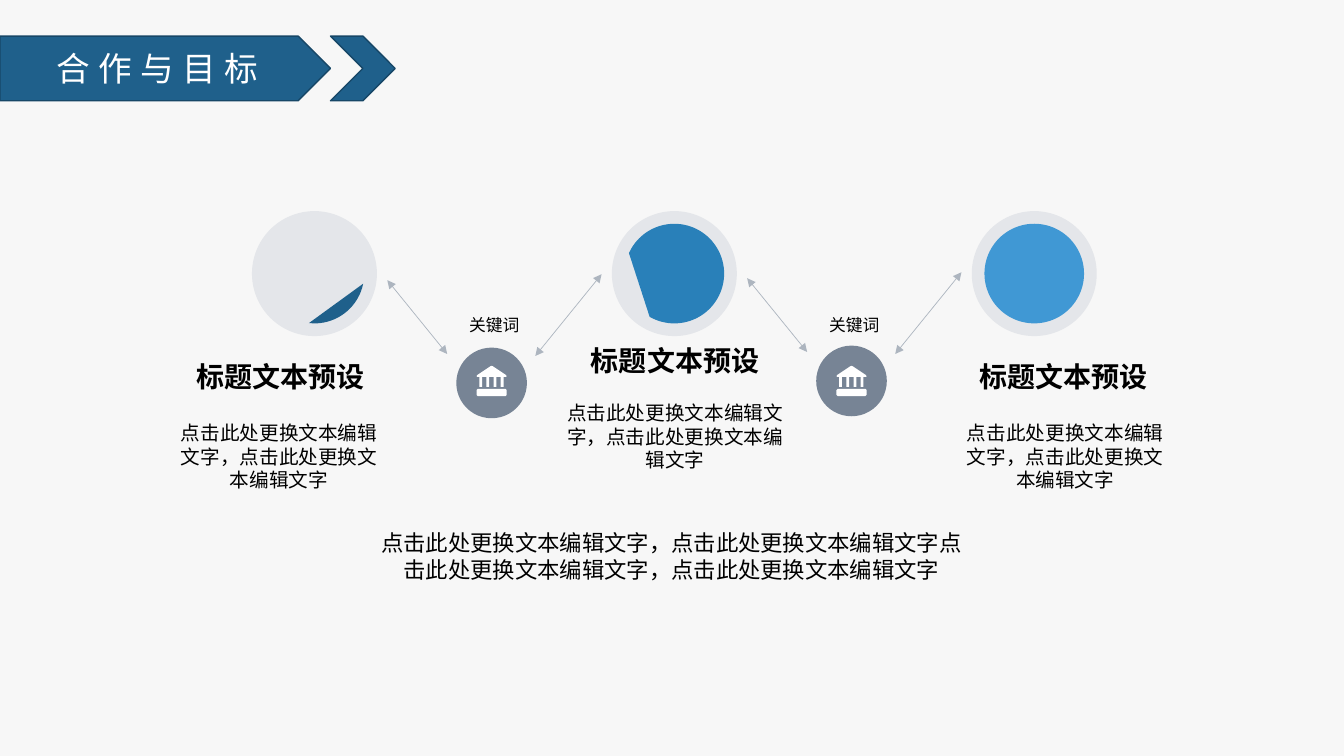
import pptx
import pptx.util
import pptx.dml.color
import pptx.enum.shapes
import pptx.enum.text
import lxml.etree

Cm = pptx.util.Cm
Pt = pptx.util.Pt
RGB = pptx.dml.color.RGBColor
Shape = pptx.enum.shapes.MSO_SHAPE
Anchor = pptx.enum.text.MSO_ANCHOR
qn = pptx.oxml.ns.qn

PAPER = RGB(0xF7, 0xF7, 0xF7)
NAVY = RGB(0x1F, 0x60, 0x8B)
EDGE = RGB(0x17, 0x47, 0x67)
BLUE = RGB(0x29, 0x80, 0xB9)
SKY = RGB(0x40, 0x98, 0xD4)
PALE = RGB(0xE4, 0xE6, 0xEA)
SLATE = RGB(0x77, 0x84, 0x95)
GREY = RGB(0xAD, 0xB5, 0xBF)
BLACK = RGB(0, 0, 0)
WHITE = RGB(255, 255, 255)
FONT = "Noto Sans CJK SC"
STEP = 9.07

deck = pptx.Presentation()
deck.slide_width = Cm(33.87)
deck.slide_height = Cm(19.05)
slide = deck.slides.add_slide(deck.slide_layouts[6])
slide.background.fill.solid()
slide.background.fill.fore_color.rgb = PAPER


def draw(kind, left, top, width, height, fill, edge=None):
    shape = slide.shapes.add_shape(kind, Cm(left), Cm(top), Cm(width), Cm(height))
    shape.shadow.inherit = False
    shape.fill.solid()
    shape.fill.fore_color.rgb = fill
    if edge is None:
        shape.line.fill.background()
    else:
        shape.line.color.rgb = edge
        shape.line.width = Pt(1)
    return shape


def write(shape, text, size, color=BLACK, bold=False):
    para = shape.text_frame.paragraphs[0]
    run = para.add_run()
    run.text = text
    para.alignment = pptx.enum.text.PP_ALIGN.CENTER
    para.font.size = Pt(size)
    para.font.bold = bold
    para.font.color.rgb = color
    para.font.name = FONT
    props = para._p.pPr.find(qn("a:defRPr"))
    east = lxml.etree.SubElement(props, qn("a:ea"))
    east.set("typeface", FONT)
    return run


banner = draw(Shape.PENTAGON, 0, 0.91, 8.33, 1.63, NAVY, EDGE)
banner.text_frame.vertical_anchor = Anchor.MIDDLE
run = write(banner, "合作与目标", 24, WHITE)
run._r.get_or_add_rPr().set("spc", "600")
draw(Shape.CHEVRON, 8.33, 0.91, 1.63, 1.63, NAVY, EDGE)

levels = [(11.68, 96.32, NAVY), (204.32, 119.68, BLUE), (162, 162, SKY)]
for i, (start, end, color) in enumerate(levels):
    left = 6.35 + i * STEP
    draw(Shape.OVAL, left, 5.32, 3.15, 3.15, PALE)
    chord = draw(Shape.CHORD, left + 0.32, 5.64, 2.51, 2.51, color)
    chord.adjustments[0] = start * 0.6
    chord.adjustments[1] = end * 0.6

base = [(3, 58), (73, 58), (76, 61), (76, 73), (73, 76), (3, 76), (0, 73), (0, 61)]
roof = [(35, 1), (38, 0), (41, 1), (74, 23), (76, 26), (74, 28)]
for x in (61, 43, 25, 7):
    roof += [(x + 7, 28), (x + 7, 53), (x, 53), (x, 28)]
roof += [(2, 28), (0, 26), (2, 23)]
arrows = [(9.76, 7.06, 11.27, 8.92), (15.16, 6.91, 13.49, 8.97)]

for i in range(2):
    shift = i * STEP
    rise = i * 0.05
    for x1, y1, x2, y2 in arrows:
        line = slide.shapes.add_connector(
            pptx.enum.shapes.MSO_CONNECTOR.STRAIGHT,
            Cm(x1 + shift), Cm(y1 - rise), Cm(x2 + shift), Cm(y2 - rise))
        line.line.color.rgb = GREY
        line.line.width = Pt(0.5)
        for end in ("a:headEnd", "a:tailEnd"):
            tip = lxml.etree.SubElement(line.line._get_or_add_ln(), qn(end))
            tip.set("type", "triangle")
        lxml.etree.SubElement(line._element.spPr, qn("a:effectLst"))

    draw(Shape.OVAL, 11.5 + shift, 8.76 - rise, 1.78, 1.78, SLATE)
    pen = slide.shapes.build_freeform(*base[0], scale=Cm(0.01))
    pen.add_line_segments(base[1:])
    pen.move_to(*roof[0])
    pen.add_line_segments(roof[1:])
    bank = pen.convert_to_shape(Cm(12.01 + shift), Cm(9.22))
    bank.shadow.inherit = False
    bank.fill.solid()
    bank.fill.fore_color.rgb = WHITE
    bank.line.fill.background()

    label = slide.shapes.add_textbox(Cm(11.1 + shift), Cm(7.8), Cm(2.72), Cm(0.76))
    label.text_frame.word_wrap = False
    label.text_frame.vertical_anchor = Anchor.MIDDLE
    write(label, "关键词", 12)

HINT = "点击此处更换文本编辑文字，点击此处更换文本编辑文字"
heads = [(4.5, 9.07, 5.13), (13.89, 8.66, 6.25), (24.23, 9.07, 5.13)]
for left, top, width in heads:
    head = slide.shapes.add_textbox(Cm(left), Cm(top), Cm(width), Cm(0.94))
    frame = head.text_frame
    frame.word_wrap = False
    frame.margin_left = frame.margin_right = 0
    frame.margin_top = frame.margin_bottom = 0
    write(head, "标题文本预设", 20, bold=True)

notes = [
    (4.29, 10.49, 5.49, 2.49, HINT, 14),
    (13.89, 9.98, 6.25, 2.69, HINT, 14),
    (24.1, 10.49, 5.49, 2.49, HINT, 14),
    (9.12, 13.21, 15.62, 1.5, HINT + HINT, 16),
]
for left, top, width, height, text, size in notes:
    note = slide.shapes.add_textbox(Cm(left), Cm(top), Cm(width), Cm(height))
    note.text_frame.word_wrap = True
    write(note, text, size)

deck.save("out.pptx")
